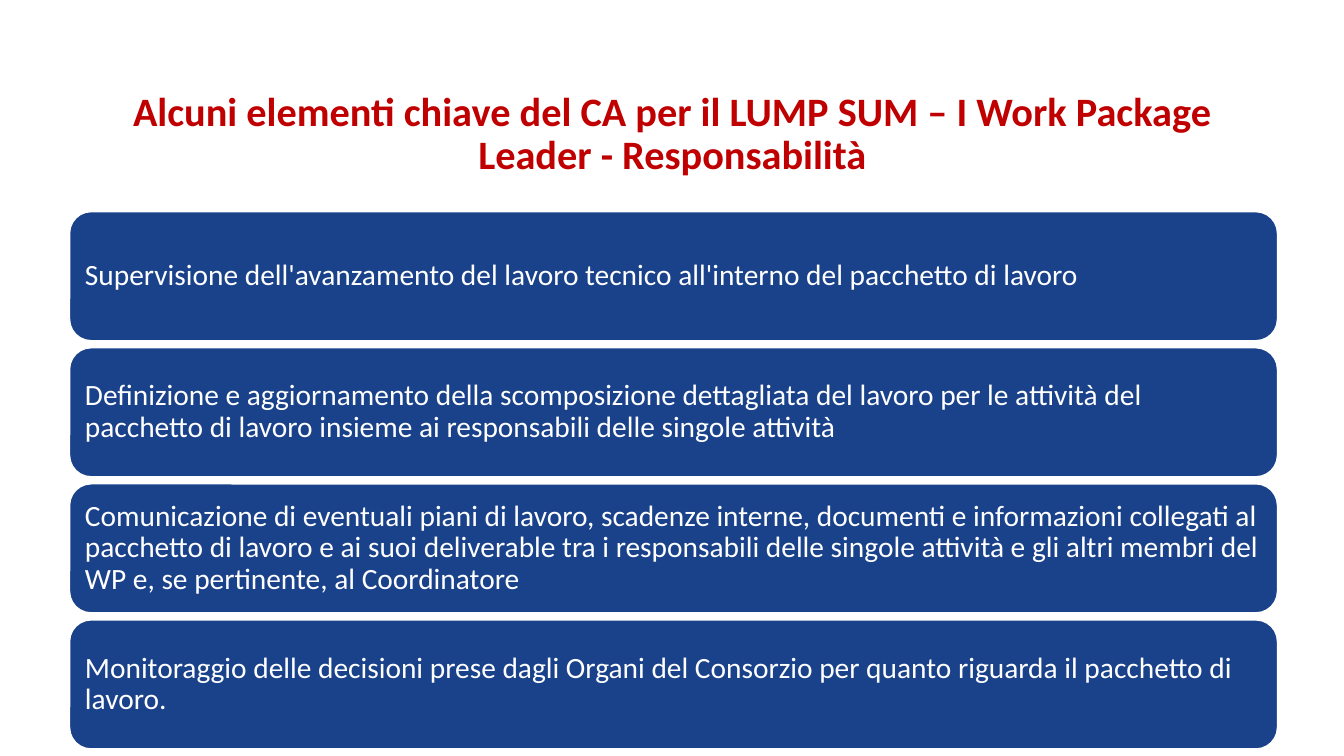
from dataclasses import dataclass

import pptx
import pptx.dml.color
import pptx.enum.shapes
import pptx.enum.text
import pptx.util

RGB = pptx.dml.color.RGBColor.from_string
ALIGN = pptx.enum.text.PP_ALIGN
SCALE = 9144  # EMU per px, 100 px to the inch


@dataclass(frozen=True)
class Theme:
    font: str = "Calibri"
    red: str = "C00000"
    blue: str = "1A428A"
    white: str = "FFFFFF"
    head: float = 28.8
    body: float = 21


@dataclass(frozen=True)
class Box:
    left: int
    top: int
    width: int
    height: int


THEME = Theme()
HEAD = Box(92, 83, 1150, 102)
CARD = Box(69, 210, 1198, 128)
STEP = 135  # from one card top to the next
INSET = 9
TITLE = ("Alcuni elementi chiave del CA per il LUMP SUM – I Work Package "
         "Leader - Responsabilità")
DUTIES = (
    "Supervisione dell'avanzamento del lavoro tecnico all'interno del "
    "pacchetto di lavoro",
    "Definizione e aggiornamento della scomposizione dettagliata del lavoro "
    "per le attività del pacchetto di lavoro insieme ai responsabili delle "
    "singole attività",
    "Comunicazione di eventuali piani di lavoro, scadenze interne, documenti "
    "e informazioni collegati al pacchetto di lavoro e ai suoi deliverable "
    "tra i responsabili delle singole attività e gli altri membri del WP e, "
    "se pertinente, al Coordinatore",
    "Monitoraggio delle decisioni prese dagli Organi del Consorzio per quanto "
    "riguarda il pacchetto di lavoro.",
)


def px(count: int) -> pptx.util.Emu:
    return pptx.util.Emu(count * SCALE)


def write(shape, text: str, size: float, color: str, align: ALIGN,
          bold: bool = False) -> None:
    frame = shape.text_frame
    frame.text = text
    frame.word_wrap = True
    frame.auto_size = pptx.enum.text.MSO_AUTO_SIZE.NONE
    frame.vertical_anchor = pptx.enum.text.MSO_ANCHOR.MIDDLE
    line = frame.paragraphs[0]
    line.alignment = align
    line.line_spacing = 0.9
    line.space_before = pptx.util.Pt(0)
    font = line.runs[0].font
    font.name = THEME.font
    font.size = pptx.util.Pt(size)
    font.bold = bold
    font.color.rgb = RGB(color)


def add_title(slide, box: Box) -> None:
    title = slide.shapes.title
    title.left, title.top = px(box.left), px(box.top)
    title.width, title.height = px(box.width), px(box.height)
    write(title, TITLE, THEME.head, THEME.red, ALIGN.CENTER, bold=True)


def add_card(slide, box: Box, text: str) -> None:
    card = slide.shapes.add_shape(
        pptx.enum.shapes.MSO_SHAPE.ROUNDED_RECTANGLE,
        px(box.left), px(box.top), px(box.width), px(box.height))
    card.shadow.inherit = False
    card.fill.solid()
    card.fill.fore_color.rgb = RGB(THEME.blue)
    card.line.color.rgb = RGB(THEME.white)
    card.line.width = pptx.util.Pt(1)
    frame = card.text_frame
    frame.margin_left = frame.margin_right = px(INSET)
    frame.margin_top = frame.margin_bottom = px(INSET)
    write(card, text, THEME.body, THEME.white, ALIGN.LEFT)


def main() -> None:
    deck = pptx.Presentation()
    deck.slide_width, deck.slide_height = px(1333), px(750)
    slide = deck.slides.add_slide(deck.slide_layouts.get_by_name("Title Only"))

    # Heading
    add_title(slide, HEAD)

    # Stack of duties
    for row, duty in enumerate(DUTIES):
        top = CARD.top + row * STEP
        add_card(slide, Box(CARD.left, top, CARD.width, CARD.height), duty)

    deck.save("out.pptx")


if __name__ == "__main__":
    main()
